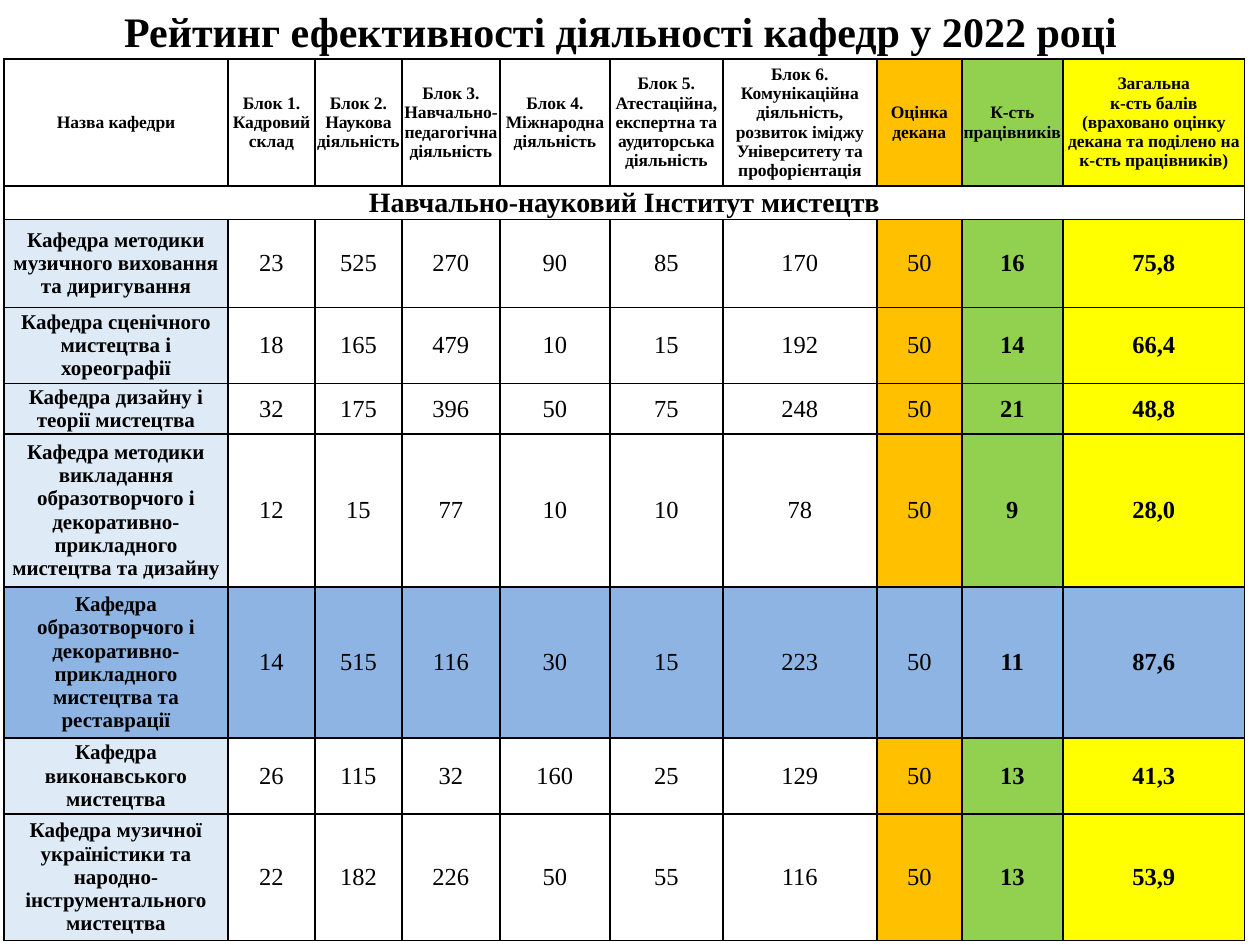
from lxml import etree
from pptx import Presentation
from pptx import util as u
from pptx.dml.color import RGBColor
from pptx.enum import text
from pptx.oxml import ns

PX = 914400 / 126  # EMU in one px
FONT = "Times New Roman"
COLORS = {
    "ink": "000000",
    "department": "DEEAF6",
    "leader": "8EB4E3",
    "dean": "FFC000",
    "staff": "92D050",
    "total": "FFFF00",
}
COLUMN_WIDTHS = [224, 87, 87, 98, 110, 113, 154, 85, 101, 182]
ROW_HEIGHTS = [127, 33, 88, 76, 50, 153, 151, 76, 126]
RATING_FILLS = {7: "dean", 8: "staff", 9: "total"}

TITLE = "Рейтинг ефективності діяльності кафедр у 2022 році"
INSTITUTE = "Навчально-науковий Інститут мистецтв"
# Newline starts a paragraph, vertical tab breaks a line
HEADINGS = [
    "Назва кафедри",
    "Блок 1. Кадровий склад",
    "Блок 2. Наукова діяльність",
    "Блок 3. Навчально-педагогічна діяльність",
    "Блок 4. Міжнародна діяльність",
    "Блок 5. Атестаційна, експертна та аудиторська діяльність",
    "Блок 6. Комунікаційна діяльність, розвиток іміджу Університету та профорієнтація",
    "Оцінка декана",
    "К-сть працівників",
    "Загальна\nк-сть балів\v(враховано оцінку декана та поділено на к-сть працівників)",
]
DEPARTMENTS = [
    ("Кафедра методики музичного виховання та диригування",
     "23 525 270 90 85 170 50 16 75,8"),
    ("Кафедра сценічного мистецтва і хореографії",
     "18 165 479 10 15 192 50 14 66,4"),
    ("Кафедра дизайну і теорії мистецтва",
     "32 175 396 50 75 248 50 21 48,8"),
    ("Кафедра методики викладання образотворчого і декоративно-прикладного мистецтва та дизайну",
     "12 15 77 10 10 78 50 9 28,0"),
    ("Кафедра образотворчого і декоративно-прикладного мистецтва та реставрації",
     "14 515 116 30 15 223 50 11 87,6"),
    ("Кафедра виконавського мистецтва",
     "26 115 32 160 25 129 50 13 41,3"),
    ("Кафедра музичної україністики та народно-інструментального мистецтва",
     "22 182 226 50 55 116 50 13 53,9"),
]
LEADER_INDEX = 4


def px(length):
    return u.Emu(round(length * PX))


def write(frame, content, size, bold=True):
    """Fill a text frame with centred text, run by run."""
    for index, line in enumerate(content.split("\n")):
        paragraph = frame.add_paragraph() if index else frame.paragraphs[0]
        paragraph.alignment = text.PP_ALIGN.CENTER
        for part, words in enumerate(line.split("\v")):
            if part:
                paragraph.add_line_break()
            run = paragraph.add_run()
            run.text = words
            run.font.name = FONT
            run.font.size = u.Pt(size)
            run.font.bold = bold
            run.font.color.rgb = RGBColor.from_string(COLORS["ink"])


def add_borders(cell):
    properties = cell._tc.get_or_add_tcPr()
    for side in ("lnL", "lnR", "lnT", "lnB"):
        line = etree.SubElement(properties, ns.qn(f"a:{side}"), w=str(u.Pt(1)))
        fill = etree.SubElement(line, ns.qn("a:solidFill"))
        etree.SubElement(fill, ns.qn("a:srgbClr"), val=COLORS["ink"])


def style_cell(cell, fill=None):
    cell.margin_left = cell.margin_right = px(1)
    cell.margin_top = cell.margin_bottom = 0
    cell.vertical_anchor = text.MSO_ANCHOR.MIDDLE
    add_borders(cell)
    if fill:
        cell.fill.solid()
        cell.fill.fore_color.rgb = RGBColor.from_string(COLORS[fill])
    else:
        cell.fill.background()


def add_title(slide):
    title = slide.shapes.add_textbox(px(64), px(-1), px(1113), px(63))
    title.text_frame.word_wrap = True
    write(title.text_frame, TITLE, 24)


def add_rating_table(slide):
    frame = slide.shapes.add_table(
        len(ROW_HEIGHTS), len(COLUMN_WIDTHS),
        px(4), px(59), px(sum(COLUMN_WIDTHS)), px(sum(ROW_HEIGHTS)))
    rating = frame.table
    rating.first_row = rating.horz_banding = False
    for column, width in zip(rating.columns, COLUMN_WIDTHS):
        column.width = px(width)
    for row, height in zip(rating.rows, ROW_HEIGHTS):
        row.height = px(height)

    # Column headings
    for column, heading in enumerate(HEADINGS):
        cell = rating.cell(0, column)
        style_cell(cell, RATING_FILLS.get(column))
        write(cell.text_frame, heading, 10)

    # Institute band across all columns
    for column in range(len(COLUMN_WIDTHS)):
        style_cell(rating.cell(1, column))
    institute = rating.cell(1, 0)
    institute.merge(rating.cell(1, len(COLUMN_WIDTHS) - 1))
    write(institute.text_frame, INSTITUTE, 16)

    # Departments and their scores
    fills = {0: "department", **RATING_FILLS}
    for index, (department, scores) in enumerate(DEPARTMENTS):
        for column, content in enumerate([department, *scores.split()]):
            cell = rating.cell(index + 2, column)
            style_cell(cell, "leader" if index == LEADER_INDEX else fills.get(column))
            write(cell.text_frame, content, 14 if column else 12,
                  bold=column in (0, 8, 9))


def main():
    deck = Presentation()
    deck.slide_width, deck.slide_height = px(1260), px(945)
    slide = deck.slides.add_slide(deck.slide_layouts[6])
    add_title(slide)
    add_rating_table(slide)
    deck.save("out.pptx")


if __name__ == "__main__":
    main()
